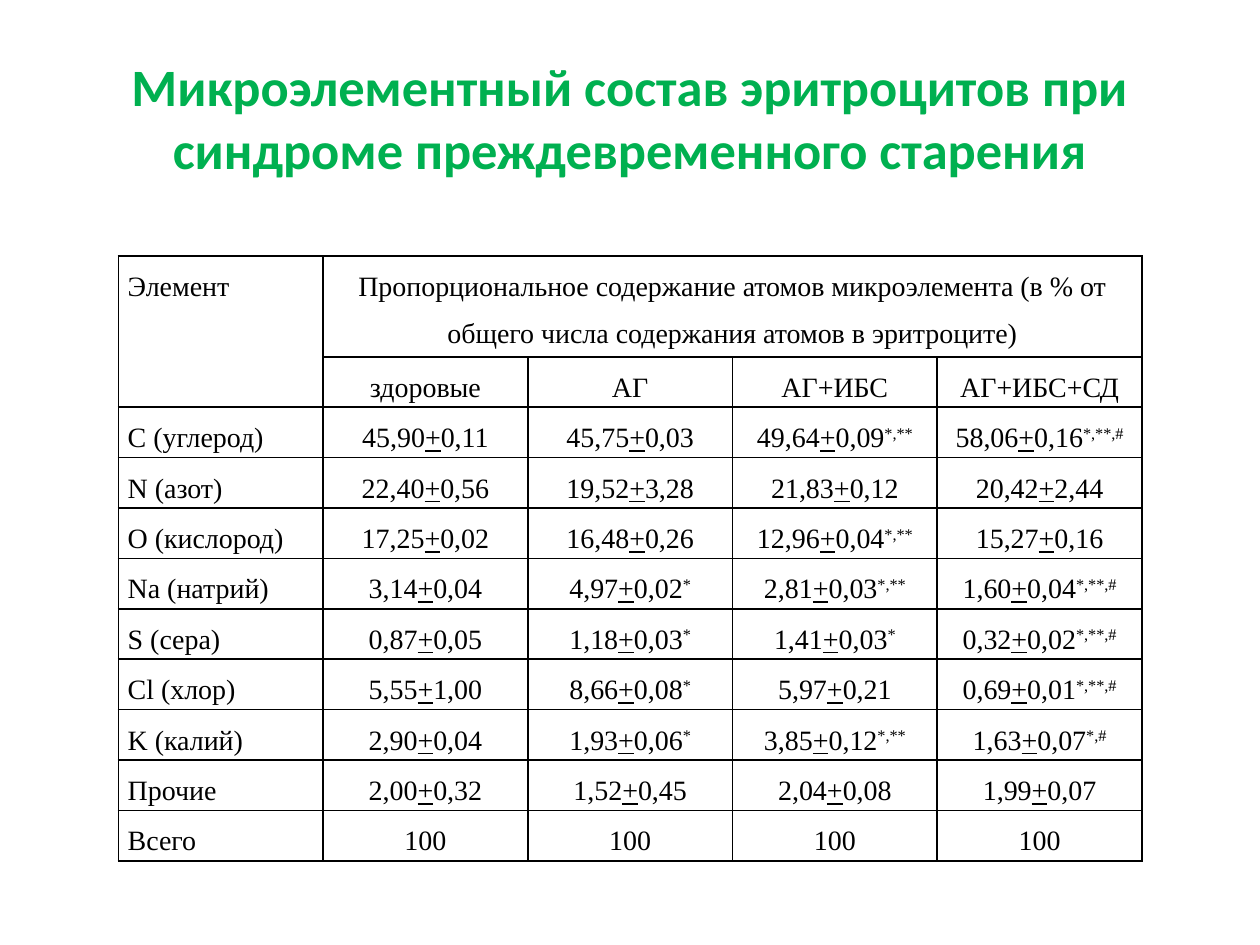
from lxml import etree
from pptx import Presentation
from pptx.dml.color import RGBColor
from pptx.enum.text import MSO_ANCHOR, PP_ALIGN
from pptx.oxml.ns import qn
from pptx.util import Pt

CENTER = PP_ALIGN.CENTER
JUSTIFY = PP_ALIGN.JUSTIFY
MIDDLE = MSO_ANCHOR.MIDDLE
TITLE_ONLY = 5

COLORS = {"title": "00B050", "text": "000000", "border": "000000"}
TITLE_FONT = {"name": "Calibri", "size": Pt(30), "bold": True}
TABLE_FONT = {"name": "Times New Roman", "size": Pt(16), "bold": False}
CELL_MARGINS = {
    "margin_left": Pt(5.4), "margin_right": Pt(5.4),
    "margin_top": Pt(0), "margin_bottom": Pt(0),
}
TITLE_BOX = {"left": Pt(36), "top": Pt(21.6), "width": Pt(648), "height": Pt(90)}

TITLE = "Микроэлементный состав эритроцитов при синдроме преждевременного старения"
ELEMENT_HEADER = "Элемент"
CONTENT_HEADER = (
    "Пропорциональное содержание атомов микроэлемента "
    "(в % от общего числа содержания атомов в эритроците)"
)
GROUPS = ["здоровые", "АГ", "АГ+ИБС", "АГ+ИБС+СД"]
ELEMENTS = [
    ("С (углерод)", "45,90+0,11", "45,75+0,03", "49,64+0,09^*,**", "58,06+0,16^*,**,#"),
    ("N (азот)", "22,40+0,56", "19,52+3,28", "21,83+0,12", "20,42+2,44"),
    ("O (кислород)", "17,25+0,02", "16,48+0,26", "12,96+0,04^*,**", "15,27+0,16"),
    ("Na (натрий)", "3,14+0,04", "4,97+0,02^*", "2,81+0,03^*,**", "1,60+0,04^*,**,#"),
    ("S (сера)", "0,87+0,05", "1,18+0,03^*", "1,41+0,03^*", "0,32+0,02^*,**,#"),
    ("Cl (хлор)", "5,55+1,00", "8,66+0,08^*", "5,97+0,21", "0,69+0,01^*,**,#"),
    ("K (калий)", "2,90+0,04", "1,93+0,06^*", "3,85+0,12^*,**", "1,63+0,07^*,#"),
    ("Прочие", "2,00+0,32", "1,52+0,45", "2,04+0,08", "1,99+0,07"),
    ("Всего", "100", "100", "100", "100"),
]
COLUMN_COUNT = len(GROUPS) + 1
COLUMN_WIDTH = 117
ROW_HEIGHT = 28.8
HEADER_ROWS = 2


def apply_format(target, values):
    """Set every attribute in the dict on the target."""
    for name, value in values.items():
        setattr(target, name, value)


def add_run(paragraph, text, font, color, underline=None, baseline=None):
    """Add one formatted run to the paragraph."""
    run = paragraph.add_run()
    run.text = text
    apply_format(run.font, font)
    run.font.color.rgb = RGBColor.from_string(COLORS[color])
    run.font.underline = underline
    if baseline:
        run._r.get_or_add_rPr().set("baseline", str(baseline))


def add_title(slide):
    """Place and fill the title placeholder."""
    title = slide.shapes.title
    apply_format(title, TITLE_BOX)
    apply_format(title.text_frame, {"word_wrap": True, "vertical_anchor": MIDDLE})
    paragraph = title.text_frame.paragraphs[0]
    paragraph.alignment = CENTER
    add_run(paragraph, TITLE, TITLE_FONT, "title")


def add_borders(cell):
    """Draw a one-point line on each side of the cell."""
    properties = cell._tc.get_or_add_tcPr()
    for side in ("a:lnL", "a:lnR", "a:lnT", "a:lnB"):
        line = etree.SubElement(properties, qn(side), w=str(Pt(1)))
        fill = etree.SubElement(line, qn("a:solidFill"))
        etree.SubElement(fill, qn("a:srgbClr"), val=COLORS["border"])


def start_paragraph(cell, alignment):
    """Return the cell's paragraph with its alignment and spacing set."""
    paragraph = cell.text_frame.paragraphs[0]
    apply_format(paragraph, {"alignment": alignment, "line_spacing": 1.5})
    return paragraph


def write_label(cell, text, alignment=CENTER):
    """Write plain text into the cell."""
    add_run(start_paragraph(cell, alignment), text, TABLE_FONT, "text")


def write_value(cell, value):
    """Write mean, underlined plus, error and superscript marks."""
    paragraph = start_paragraph(cell, CENTER)
    measure, _, marks = value.partition("^")
    mean, plus, error = measure.partition("+")
    add_run(paragraph, mean, TABLE_FONT, "text")
    if plus:
        add_run(paragraph, plus, TABLE_FONT, "text", underline=True)
        add_run(paragraph, error, TABLE_FONT, "text")
    if marks:
        add_run(paragraph, marks, TABLE_FONT, "text", baseline=30000)


def add_element_table(slide):
    """Build the table of element shares by patient group."""
    row_count = HEADER_ROWS + len(ELEMENTS)
    table = slide.shapes.add_table(
        row_count, COLUMN_COUNT, Pt(67.6), Pt(146.3),
        Pt(COLUMN_WIDTH * COLUMN_COUNT), Pt(ROW_HEIGHT * (row_count + 1)),
    ).table
    apply_format(table, {"first_row": False, "horz_banding": False})
    for column in table.columns:
        column.width = Pt(COLUMN_WIDTH)
    for index, row in enumerate(table.rows):
        row.height = Pt(ROW_HEIGHT * (2 if index == 0 else 1))
    for cell in table.iter_cells():
        apply_format(cell, CELL_MARGINS)
        add_borders(cell)
        cell.fill.background()

    table.cell(0, 0).merge(table.cell(1, 0))
    table.cell(0, 1).merge(table.cell(0, COLUMN_COUNT - 1))
    write_label(table.cell(0, 0), ELEMENT_HEADER, JUSTIFY)
    write_label(table.cell(0, 1), CONTENT_HEADER)
    for column, group in enumerate(GROUPS, start=1):
        write_label(table.cell(1, column), group)
    for row, (element, *values) in enumerate(ELEMENTS, start=HEADER_ROWS):
        write_label(table.cell(row, 0), element, JUSTIFY)
        for column, value in enumerate(values, start=1):
            write_value(table.cell(row, column), value)


def main():
    """Create the slide and save the presentation."""
    presentation = Presentation()
    apply_format(presentation, {"slide_width": Pt(720), "slide_height": Pt(540)})
    slide = presentation.slides.add_slide(presentation.slide_layouts[TITLE_ONLY])
    add_title(slide)
    add_element_table(slide)
    presentation.save("out.pptx")


if __name__ == "__main__":
    main()
